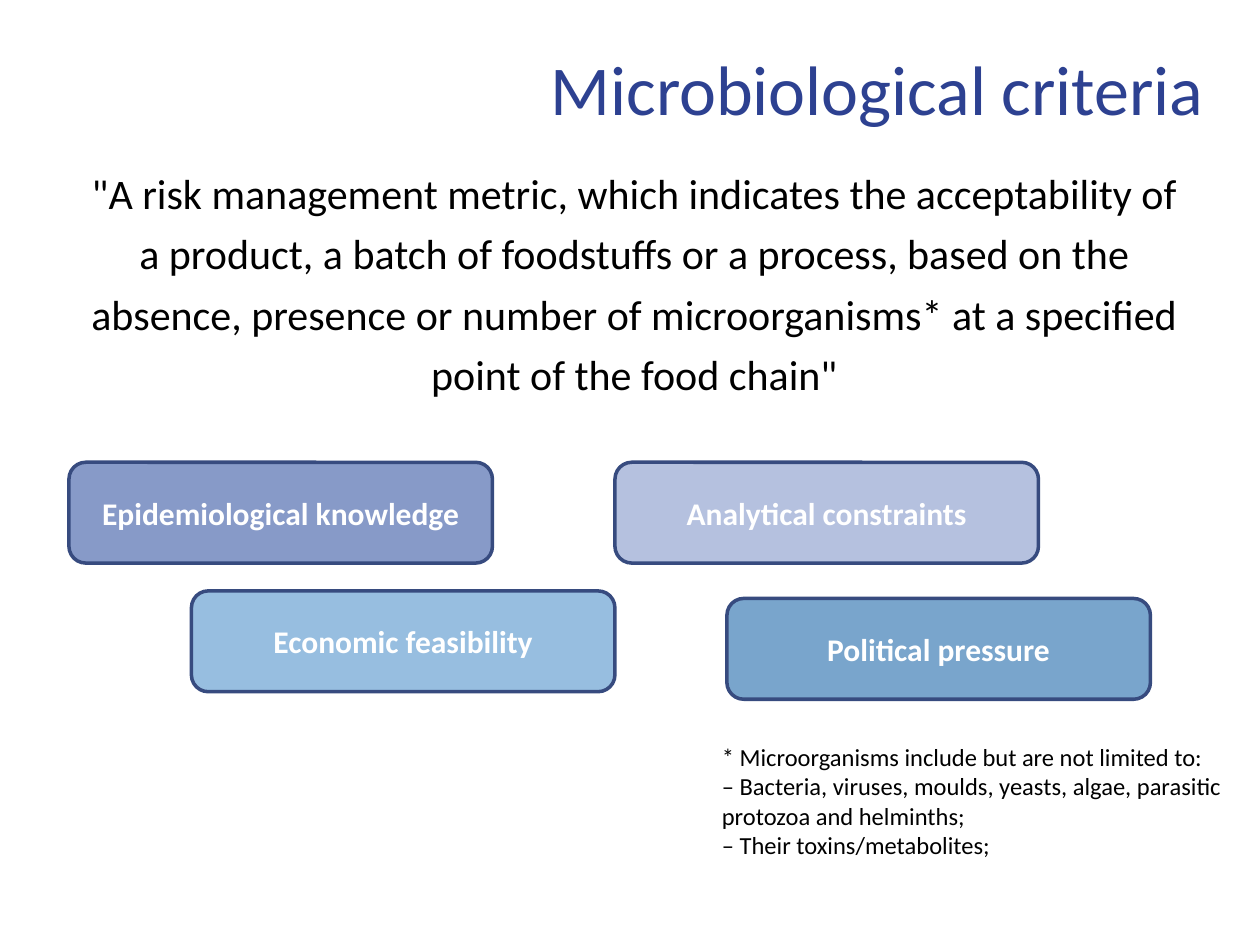
import pptx
import pptx.util
import pptx.dml.color
import pptx.enum.shapes
import pptx.enum.text
import pptx.oxml.ns
import lxml.etree

Pt = pptx.util.Pt
ALIGN = pptx.enum.text.PP_ALIGN
HUES = {
    "text": "000000", "title": "2D4191", "edge": "374B7F", "white": "FFFFFF",
    "navy": "4A66AC", "pale": "B5C1DF", "sky": "629DD1", "steel": "3477B2",
}


class Deck:
    font = "Calibri"

    def __init__(self, prs):
        self.slide = prs.slides.add_slide(prs.slide_layouts[6])

    def hue(self, name):
        return pptx.dml.color.RGBColor.from_string(HUES[name])

    def fill(self, frame, lines, size, hue, align, space=None, bold=False):
        frame.word_wrap = True
        frame.text = "\n".join(lines)
        for para in frame.paragraphs:
            para.alignment = align
            para.line_spacing = space
            para.font.name = self.font
            para.font.size = Pt(size)
            para.font.bold = bold
            para.font.color.rgb = self.hue(hue)

    def text(self, box, lines, size, hue="text", align=ALIGN.LEFT, space=None):
        shape = self.slide.shapes.add_textbox(*map(Pt, box))
        self.fill(shape.text_frame, lines, size, hue, align, space)

    def card(self, left, top, label, hue, alpha=None):
        shape = self.slide.shapes.add_shape(
            pptx.enum.shapes.MSO_SHAPE.ROUNDED_RECTANGLE,
            Pt(left), Pt(top), Pt(242), Pt(57.6))
        shape.shadow.inherit = False
        shape.fill.solid()
        shape.fill.fore_color.rgb = self.hue(hue)
        shape.line.color.rgb = self.hue("edge")
        shape.line.width = Pt(2)
        if alpha:
            qn = pptx.oxml.ns.qn
            solid = shape.element.spPr.find(qn("a:solidFill"))
            tint = solid.find(qn("a:srgbClr"))
            lxml.etree.SubElement(tint, qn("a:alpha"), val=str(alpha * 1000))
        frame = shape.text_frame
        frame.vertical_anchor = pptx.enum.text.MSO_ANCHOR.MIDDLE
        self.fill(frame, [label], 18, "white", ALIGN.CENTER, bold=True)


def main():
    prs = pptx.Presentation()
    prs.slide_width, prs.slide_height = Pt(720), Pt(540)
    deck = Deck(prs)

    # Definition and title
    deck.text((39.6, 86.4, 645.8, 155.5), [
        '"A risk management metric, which indicates the acceptability of '
        'a product, a batch of foodstuffs or a process, based on the '
        'absence, presence or number of microorganisms* at a specified '
        'point of the food chain"'], 24, align=ALIGN.CENTER, space=1.2)
    deck.text((74.2, 28.1, 620.6, 104.4), ["Microbiological criteria"],
              40, "title", ALIGN.RIGHT, 0.9)

    # Footnote
    deck.text((405.4, 420.5, 308.9, 74.9), [
        "* Microorganisms include but are not limited to:",
        "– Bacteria, viruses, moulds, yeasts, algae, parasitic "
        "protozoa and helminths;",
        "– Their toxins/metabolites;"], 14)

    # Factors
    for card in (
        (39.4, 264.2, "Epidemiological knowledge", "navy", 66),
        (351.4, 264.2, "Analytical constraints", "pale"),
        (109.4, 337.7, "Economic feasibility", "sky", 66),
        (415.4, 342, "Political pressure", "steel", 66),
    ):
        deck.card(*card)

    prs.save("out.pptx")


if __name__ == "__main__":
    main()
